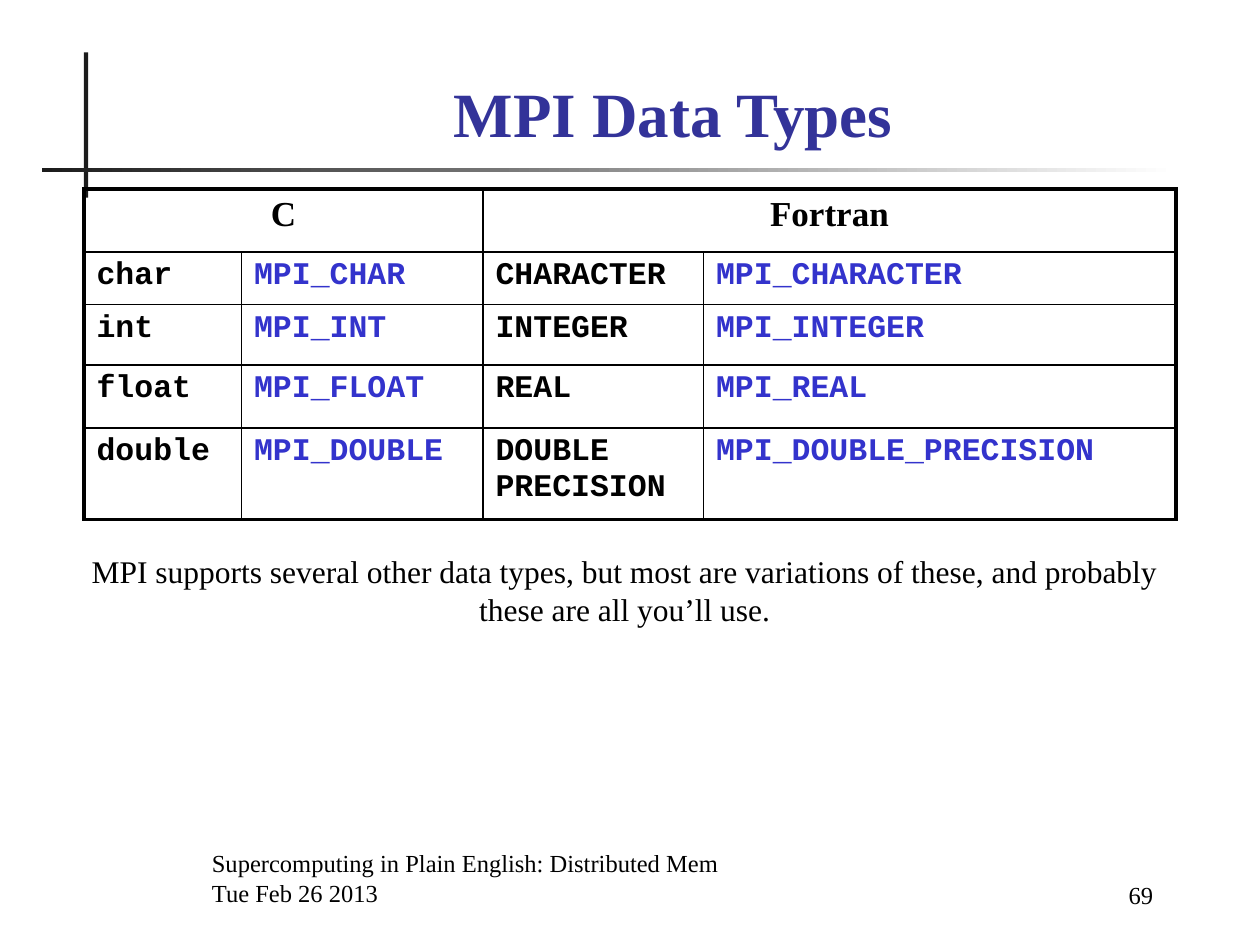
from lxml.etree import fromstring
from pptx import Presentation
from pptx.dml.color import RGBColor
from pptx.enum.shapes import MSO_SHAPE
from pptx.enum.text import MSO_ANCHOR, PP_ALIGN
from pptx.util import Pt

BLACK = RGBColor(0, 0, 0)
WHITE = RGBColor(255, 255, 255)
DARK = RGBColor(0x1C, 0x1C, 0x1C)
NAVY = RGBColor(0x33, 0x33, 0x99)
BLUE = RGBColor(0x33, 0x33, 0xCC)

SERIF = "Times New Roman"
TITLE = dict(name=SERIF, size=Pt(36), bold=True)
HEAD = dict(name=SERIF, size=Pt(20), bold=True)
CODE = dict(name="Courier New", size=Pt(18), bold=True)
NOTE = dict(name=SERIF, size=Pt(18), bold=False)
FOOT = dict(name=SERIF, size=Pt(14), bold=False)

COLS = [90, 138, 126, 270]
ROWS = [36, 30, 34.5, 36, 52.5]
TYPES = [
    ("C", "", "Fortran", ""),
    ("char", "MPI_CHAR", "CHARACTER", "MPI_CHARACTER"),
    ("int", "MPI_INT", "INTEGER", "MPI_INTEGER"),
    ("float", "MPI_FLOAT", "REAL", "MPI_REAL"),
    ("double", "MPI_DOUBLE", "DOUBLE PRECISION", "MPI_DOUBLE_PRECISION"),
]
LINE = (
    '<a:{} xmlns:a="http://schemas.openxmlformats.org/drawingml/2006/main" w="{}">'
    '<a:solidFill><a:srgbClr val="{}"/></a:solidFill></a:{}>'
)


def write(frame, text, form, color=BLACK, align=PP_ALIGN.LEFT):
    frame.text = text
    for para in frame.paragraphs:
        para.alignment = align
        for key, value in form.items():
            setattr(para.font, key, value)
        para.font.color.rgb = color


def add_bar(slide, *box):
    bar = slide.shapes.add_shape(MSO_SHAPE.RECTANGLE, *map(Pt, box))
    bar.shadow.inherit = False
    bar.line.fill.background()
    return bar.fill


def add_title(slide, text, *box):
    title = slide.shapes.title
    title.left, title.top, title.width, title.height = map(Pt, box)
    title.text_frame.vertical_anchor = MSO_ANCHOR.BOTTOM
    write(title.text_frame, text, TITLE, NAVY, PP_ALIGN.CENTER)


def add_text(slide, text, form, align, anchor, *box):
    frame = slide.shapes.add_textbox(*map(Pt, box)).text_frame
    frame.word_wrap = True
    frame.vertical_anchor = anchor
    write(frame, text, form, align=align)


def set_edges(cell, heavy):
    props = cell._tc.get_or_add_tcPr()
    for spot, (tag, thick) in enumerate(heavy.items()):
        width = Pt(2.25 if thick else 1)
        props.insert(spot, fromstring(LINE.format(tag, width, BLACK, tag)))


def add_grid(slide, left, top):
    box = map(Pt, (left, top, sum(COLS), sum(ROWS)))
    table = slide.shapes.add_table(len(ROWS), len(COLS), *box).table
    table.first_row = table.horz_banding = False
    for col, width in zip(table.columns, COLS):
        col.width = Pt(width)
    for row, height in zip(table.rows, ROWS):
        row.height = Pt(height)
    for col in (0, 2):
        table.cell(0, col).merge(table.cell(0, col + 1))
    for r, names in enumerate(TYPES):
        for c, name in enumerate(names):
            cell = table.cell(r, c)
            cell.fill.background()
            last = c + cell.span_width if cell.is_merge_origin else c + 1
            set_edges(cell, dict(lnL=c == 0, lnR=last == len(COLS),
                                 lnT=r == 0, lnB=r == len(ROWS) - 1))
            if cell.is_spanned:
                continue
            if r == 0:
                write(cell.text_frame, name, HEAD, align=PP_ALIGN.CENTER)
            else:
                write(cell.text_frame, name, CODE, BLUE if c % 2 else BLACK)


def main():
    deck = Presentation()
    deck.slide_width, deck.slide_height = Pt(720), Pt(540)
    slide = deck.slides.add_slide(deck.slide_layouts[5])

    post = add_bar(slide, 48, 30, 2.5, 83)
    post.solid()
    post.fore_color.rgb = DARK
    rule = add_bar(slide, 24, 96, 648, 2.25)
    rule.gradient()
    rule.gradient_angle = 0
    for stop, color, place in zip(rule.gradient_stops, (DARK, WHITE), (0, 1)):
        stop.color.rgb = color
        stop.position = place

    add_title(slide, "MPI Data Types", 78, 36, 613.5, 53.5)
    add_grid(slide, 48, 108)
    add_text(slide, "Supercomputing in Plain English: Distributed Mem\nTue Feb 26 2013",
             FOOT, PP_ALIGN.LEFT, MSO_ANCHOR.BOTTOM, 114, 486, 438, 36)
    add_text(slide, "69", FOOT, PP_ALIGN.RIGHT, MSO_ANCHOR.BOTTOM, 564, 487.5, 102, 36)
    add_text(slide, "MPI supports several other data types, but most are variations "
             "of these, and probably these are all you’ll use.",
             NOTE, PP_ALIGN.CENTER, MSO_ANCHOR.TOP, 42, 312, 630, 65)
    deck.save("out.pptx")


if __name__ == "__main__":
    main()
